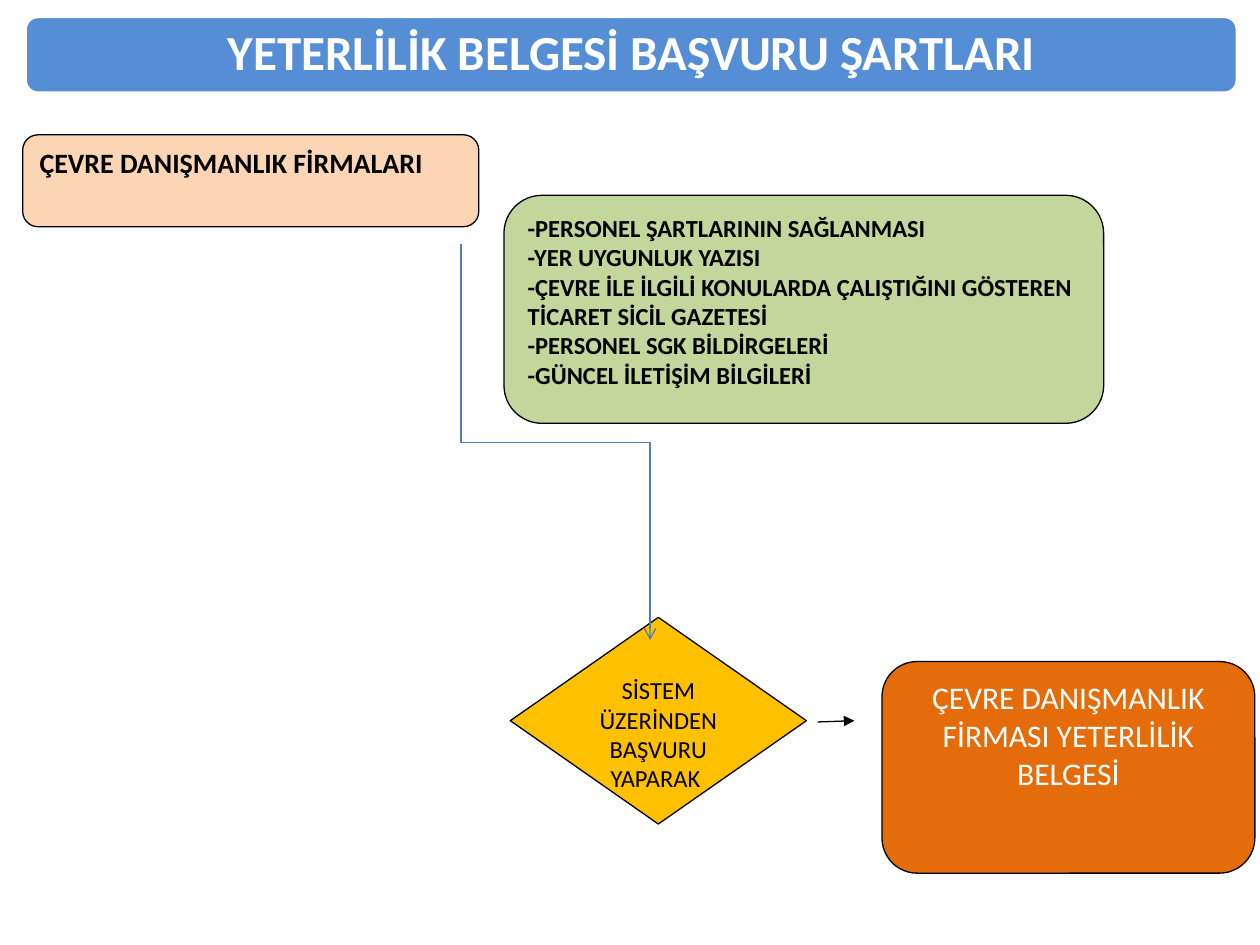
import dataclasses

import pptx
import pptx.dml.color
import pptx.enum.shapes
import pptx.enum.text
import pptx.oxml.ns
import pptx.util
from lxml import etree

SHAPE = pptx.enum.shapes.MSO_SHAPE
CONNECTOR = pptx.enum.shapes.MSO_CONNECTOR
ALIGN = pptx.enum.text.PP_ALIGN
ANCHOR = pptx.enum.text.MSO_ANCHOR


@dataclasses.dataclass(frozen=True)
class Theme:
    font: str = "Calibri"
    banner: str = "558ED5"
    firms: str = "FCD5B5"
    conditions: str = "C3D69B"
    decision: str = "FFC000"
    certificate: str = "E46C0A"
    route: str = "4B7EBC"
    dark: str = "000000"
    light: str = "FFFFFF"
    title_size: int = 28
    result_size: int = 18
    heading_size: int = 16
    text_size: int = 14
    outline: float = 0.75
    banner_outline: float = 2


def color(code):
    return pptx.dml.color.RGBColor.from_string(code)


def add_tag(parent, tag, **attributes):
    return etree.SubElement(parent, pptx.oxml.ns.qn(tag), attributes)


class FlowSlide:
    """Places elements on a grid of 100 columns by 75 rows."""

    columns, rows = 100, 75

    def __init__(self, deck, theme):
        self.theme = theme
        self.cell_width = deck.slide_width / self.columns
        self.cell_height = deck.slide_height / self.rows
        self.page = deck.slides.add_slide(deck.slide_layouts[1])

    def grid(self, column, row):
        return round(column * self.cell_width), round(row * self.cell_height)

    def place(self, shape, area):
        shape.left, shape.top = self.grid(*area[:2])
        shape.width, shape.height = self.grid(*area[2:])

    def paint(self, shape, fill, line, width):
        shape.fill.solid()
        shape.fill.fore_color.rgb = color(fill)
        shape.line.color.rgb = color(line)
        shape.line.width = pptx.util.Pt(width)

    def set_text(self, shape, lines, size, ink, bold=False, align=ALIGN.LEFT, anchor=ANCHOR.TOP):
        frame = shape.text_frame
        frame.word_wrap = True
        frame.auto_size = pptx.enum.text.MSO_AUTO_SIZE.NONE
        frame.vertical_anchor = anchor
        for number, line in enumerate(lines):
            para = frame.add_paragraph() if number else frame.paragraphs[0]
            para.alignment = align
            para.space_before = pptx.util.Pt(0)
            span = para.add_run()
            span.text = line
            span.font.name = self.theme.font
            span.font.size = pptx.util.Pt(size)
            span.font.bold = bold
            span.font.color.rgb = color(ink)

    def box(self, kind, area, fill, line=None, width=None):
        shape = self.page.shapes.add_shape(kind, *self.grid(*area[:2]), *self.grid(*area[2:]))
        shape.shadow.inherit = False
        self.paint(shape, fill, line or self.theme.dark, width or self.theme.outline)
        return shape

    def title(self, area, text):
        theme = self.theme
        title = self.page.shapes.title
        banner = self.box(SHAPE.ROUNDED_RECTANGLE, area, theme.banner,
                          theme.light, theme.banner_outline)
        title.element.addprevious(banner.element)
        self.place(title, area)
        self.set_text(title, [text], theme.title_size, theme.light, True,
                      ALIGN.CENTER, ANCHOR.MIDDLE)
        title.text_frame.paragraphs[0].line_spacing = 0.9

    def list_box(self, area, lines, fill):
        body = self.page.placeholders[1]
        self.place(body, area)
        # Rounded outline for the body placeholder
        outline = add_tag(body.element.spPr, "a:prstGeom", prst="roundRect")
        add_tag(outline, "a:avLst")
        self.paint(body, fill, self.theme.dark, self.theme.outline)
        self.set_text(body, lines, self.theme.text_size, self.theme.dark, True)
        # Typed dashes take the place of bullets
        for para in body.text_frame.paragraphs:
            settings = para._p.get_or_add_pPr()
            settings.set("marL", "0")
            settings.set("indent", "0")
            add_tag(settings, "a:buNone")

    def arrow(self, kind, start, end, ink, head):
        line = self.page.shapes.add_connector(kind, *self.grid(*start), *self.grid(*end))
        line.line.color.rgb = color(ink)
        line.line.width = pptx.util.Pt(self.theme.outline)
        add_tag(line.line._get_or_add_ln(), "a:tailEnd", type=head)
        add_tag(line.element.spPr, "a:effectLst")
        return line

    def drop_arrow(self, start, end, ink, head):
        """Elbow that leaves downwards: a sideways elbow turned by 270 degrees."""
        (left, top), (right, bottom) = start, end
        middle_x, middle_y = (left + right) / 2, (top + bottom) / 2
        half_long, half_short = (bottom - top) / 2, (right - left) / 2
        line = self.arrow(CONNECTOR.ELBOW,
                          (middle_x + half_long, middle_y - half_short),
                          (middle_x - half_long, middle_y + half_short), ink, head)
        line.element.spPr.find(pptx.oxml.ns.qn("a:xfrm")).set("rot", str(270 * 60000))


def main():
    deck = pptx.Presentation()
    deck.slide_width = pptx.util.Inches(10)
    deck.slide_height = pptx.util.Inches(7.5)
    theme = Theme()
    flow = FlowSlide(deck, theme)

    # Title banner
    flow.title((2, 1.3, 96.2, 6.1), "YETERLİLİK BELGESİ BAŞVURU ŞARTLARI")

    # Application conditions
    flow.list_box((40, 15.5, 47.6, 18.1), [
        "-PERSONEL ŞARTLARININ SAĞLANMASI",
        "-YER UYGUNLUK YAZISI",
        "-ÇEVRE İLE İLGİLİ KONULARDA ÇALIŞTIĞINI GÖSTEREN TİCARET SİCİL GAZETESİ",
        "-PERSONEL SGK BİLDİRGELERİ",
        "-GÜNCEL İLETİŞİM BİLGİLERİ",
    ], theme.conditions)

    # Certificate, firms and decision
    certificate = flow.box(SHAPE.ROUNDED_RECTANGLE, (70, 52.5, 29.6, 16.8), theme.certificate)
    flow.set_text(certificate, ["ÇEVRE DANIŞMANLIK FİRMASI YETERLİLİK BELGESİ"],
                  theme.result_size, theme.light, align=ALIGN.CENTER)
    firms = flow.box(SHAPE.ROUNDED_RECTANGLE, (1.8, 10.7, 36.2, 7.3), theme.firms)
    flow.set_text(firms, ["ÇEVRE DANIŞMANLIK FİRMALARI"], theme.heading_size, theme.dark, True)
    decision = flow.box(SHAPE.FLOWCHART_DECISION, (40.5, 49, 23.5, 16.4), theme.decision)
    flow.set_text(decision, ["SİSTEM ÜZERİNDEN BAŞVURU YAPARAK "],
                  theme.text_size, theme.dark, align=ALIGN.CENTER)

    # Flow arrows
    flow.arrow(CONNECTOR.STRAIGHT, (64.9, 57.3), (67.8, 57.2), theme.dark, "triangle")
    flow.drop_arrow((36.6, 19.4), (51.6, 50.8), theme.route, "arrow")

    deck.save("out.pptx")


if __name__ == "__main__":
    main()
